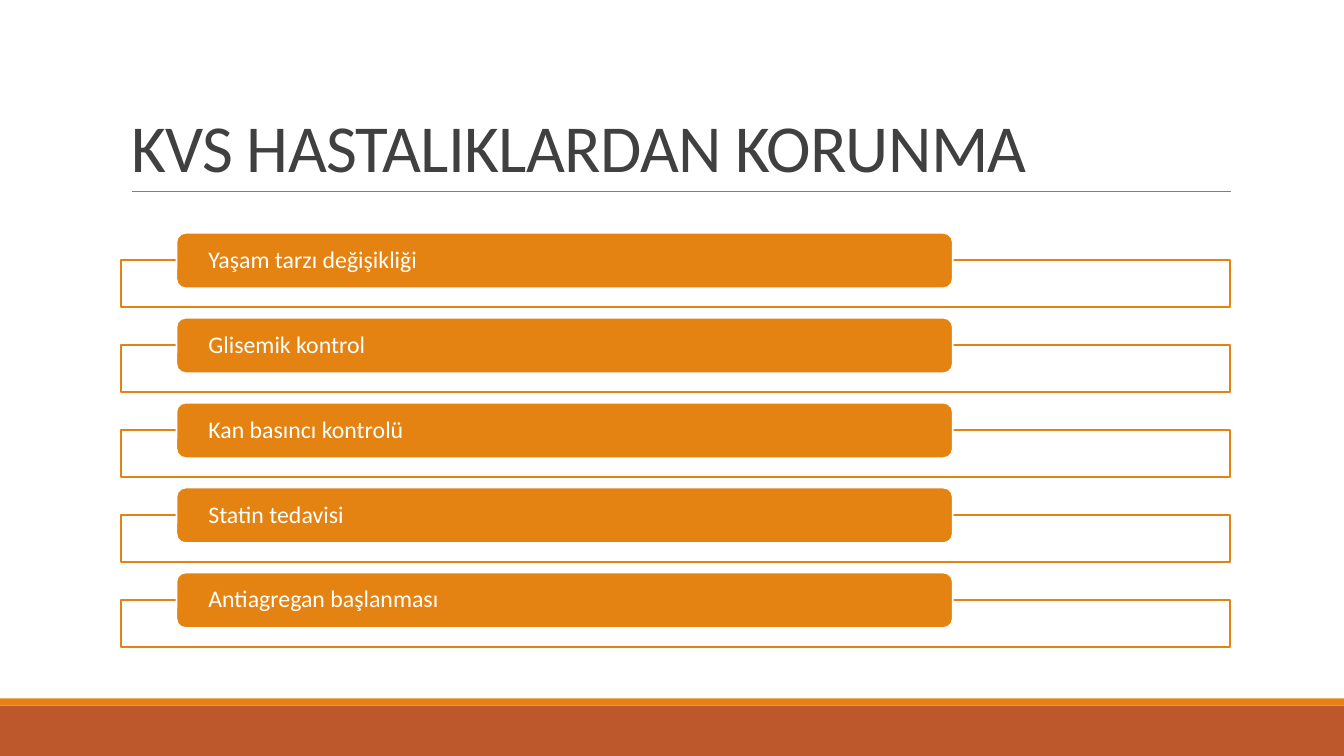
from dataclasses import dataclass

from lxml.etree import SubElement
from pptx import Presentation
from pptx.dml.color import RGBColor
from pptx.enum.shapes import MSO_CONNECTOR as Connector, MSO_SHAPE as Shape
from pptx.enum.text import MSO_ANCHOR as Anchor, PP_ALIGN as Align
from pptx.oxml.ns import qn
from pptx.util import Inches, Pt

# Content
TITLE = "KVS HASTALIKLARDAN KORUNMA"
MEASURES = [
    "Yaşam tarzı değişikliği",
    "Glisemik kontrol",
    "Kan basıncı kontrolü",
    "Statin tedavisi",
    "Antiagregan başlanması",
]


@dataclass(frozen=True)
class Theme:
    font: str = "Calibri"
    title_size: float = 48
    label_size: float = 17
    ink: str = "404040"
    rule: str = "808080"
    orange: str = "E48312"
    rust: str = "BD582C"
    white: str = "FFFFFF"


theme = Theme()

# Grid, in inches
WIDTH, HEIGHT = 13.33, 7.5
LEFT, SPAN = 1.2, 11
FOOTER, STRIPE = 0.5, 0.07
ROW_TOP, ROW_PITCH = 2.31, 0.8425
FRAME_DROP, FRAME_HEIGHT = 0.27, 0.47
LABEL_INDENT, LABEL_SHARE, LABEL_HEIGHT = 0.05 * SPAN, 0.7, 0.55
LABEL_INSET = 0.29


def color(value):
    return RGBColor.from_string(value)


def add_block(page, kind, left, top, width, height, fill, line=None):
    block = page.shapes.add_shape(
        kind, Inches(left), Inches(top), Inches(width), Inches(height))
    block.shadow.inherit = False
    block.fill.solid()
    block.fill.fore_color.rgb = color(fill)
    if line:
        block.line.color.rgb = color(line)
        block.line.width = Pt(1.25)
    else:
        block.line.fill.background()
    return block


def write(frame, text, size, ink, spacing):
    frame.word_wrap = True
    frame.text = text
    para = frame.paragraphs[0]
    para.alignment = Align.LEFT
    para.line_spacing = spacing
    span = para.runs[0]
    span.font.name = theme.font
    span.font.size = Pt(size)
    span.font.color.rgb = color(ink)
    return span


def add_footer(page):
    top = HEIGHT - FOOTER
    add_block(page, Shape.RECTANGLE, 0, top, WIDTH, FOOTER, theme.rust)
    add_block(page, Shape.RECTANGLE, 0, top - STRIPE, WIDTH, STRIPE, theme.orange)


def add_title(page):
    title = page.shapes.title
    title.left, title.top = Inches(LEFT), Inches(0.31)
    title.width, title.height = Inches(SPAN), Inches(1.59)
    title.text_frame.vertical_anchor = Anchor.BOTTOM
    span = write(title.text_frame, TITLE, theme.title_size, theme.ink, 0.85)
    span.font._element.set("spc", "-50")  # letter spacing, 1/100 pt

    rule = page.shapes.add_connector(
        Connector.STRAIGHT, Inches(1.31), Inches(1.9), Inches(12.21), Inches(1.9))
    rule.line.color.rgb = color(theme.rule)
    rule.line.width = Pt(0.5)
    SubElement(rule._element.spPr, qn("a:effectLst"))


def add_measure(page, row, text):
    top = ROW_TOP + row * ROW_PITCH
    frame = add_block(page, Shape.RECTANGLE, LEFT, top + FRAME_DROP, SPAN,
                      FRAME_HEIGHT, theme.white, theme.orange)
    # 90 % opaque fill
    fill = frame._element.spPr.find(qn("a:solidFill"))
    SubElement(fill[0], qn("a:alpha"), val="90000")

    label = add_block(page, Shape.ROUNDED_RECTANGLE, LEFT + LABEL_INDENT, top,
                      SPAN * LABEL_SHARE, LABEL_HEIGHT, theme.orange, theme.white)
    body = label.text_frame
    body.margin_left = body.margin_right = Inches(LABEL_INSET)
    body.margin_top = body.margin_bottom = 0
    body.vertical_anchor = Anchor.MIDDLE
    write(body, text, theme.label_size, theme.white, 0.9)


def main():
    deck = Presentation()
    deck.slide_width, deck.slide_height = Inches(WIDTH), Inches(HEIGHT)
    page = deck.slides.add_slide(deck.slide_layouts[5])
    add_footer(page)
    add_title(page)
    for row, text in enumerate(MEASURES):
        add_measure(page, row, text)
    deck.save("out.pptx")


if __name__ == "__main__":
    main()
